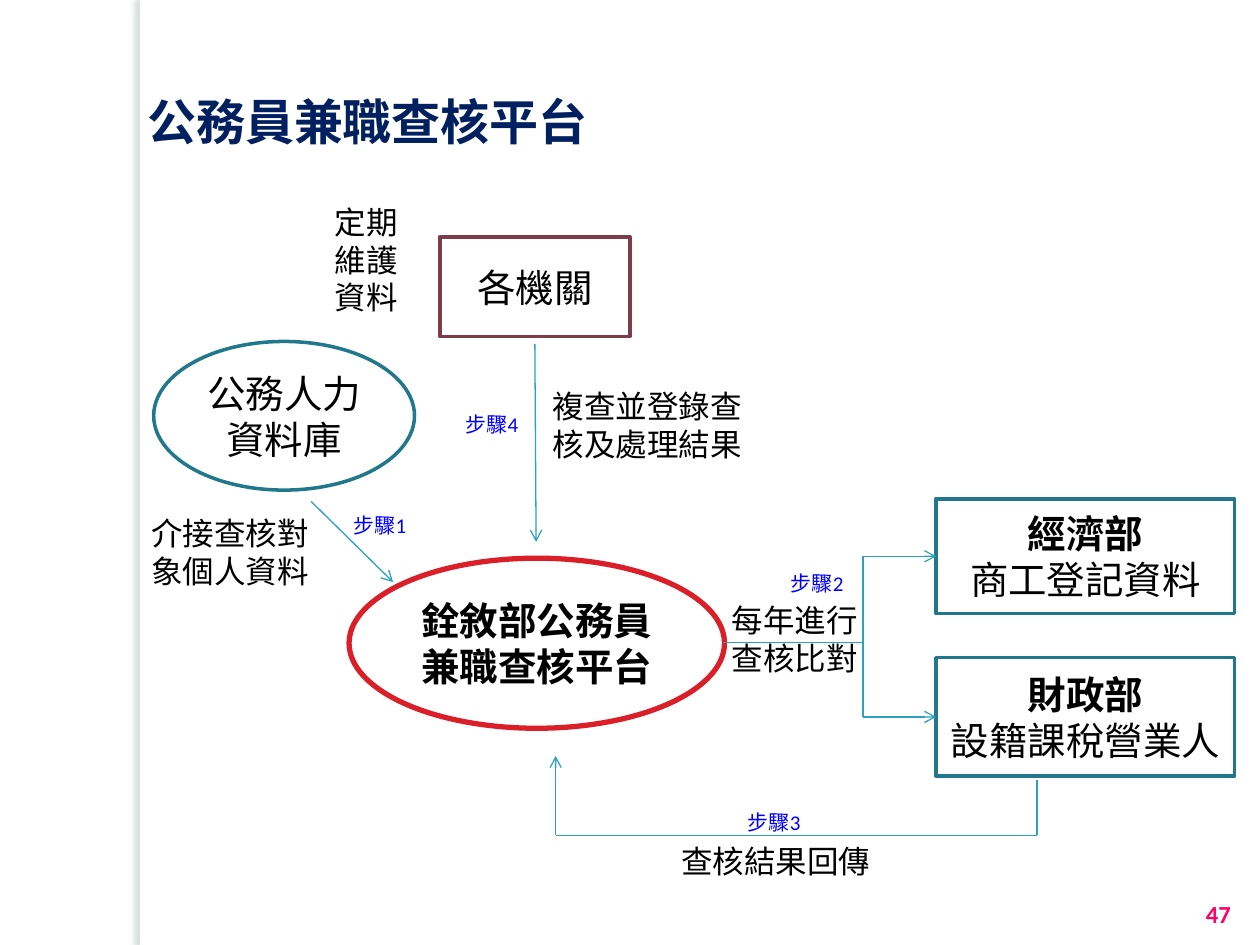
from dataclasses import dataclass

from lxml import etree
from pptx import Presentation
from pptx import util as u
from pptx.dml.color import RGBColor
from pptx.enum import shapes, text
from pptx.oxml import ns, xmlchemy

RECT, OVAL = shapes.MSO_SHAPE.RECTANGLE, shapes.MSO_SHAPE.OVAL
MIDDLE, BOTTOM = text.MSO_ANCHOR.MIDDLE, text.MSO_ANCHOR.BOTTOM
CENTER, LEFT = text.PP_ALIGN.CENTER, text.PP_ALIGN.LEFT


@dataclass(frozen=True)
class Theme:
    white: str = "FFFFFF"
    black: str = "000000"
    navy: str = "002060"
    teal: str = "21788D"
    arrow: str = "2DA2BF"
    plum: str = "7D3C4A"
    red: str = "DA1F28"
    blue: str = "0000FF"
    pink: str = "FF0066"
    shade: str = "6E7A7D"
    title: int = 28
    node: int = 22
    note: int = 18
    number: int = 14
    step: int = 12
    sans: str = "Noto Sans CJK TC"
    heading: str = "Noto Sans CJK SC"
    label: str = "Arial"
    latin: str = "Calibri"


T = Theme()


def sub(parent, tag, **attrs):
    el = etree.SubElement(parent, ns.qn(tag))
    for key, value in attrs.items():
        el.set(key, str(value))
    return el


def write(sp, lines, size, font, color=T.black, bold=(), align=LEFT, anchor=None):
    tf = sp.text_frame
    tf.word_wrap = True
    if anchor is not None:
        tf.vertical_anchor = anchor
    for i, line in enumerate(lines):
        p = tf.paragraphs[0] if i == 0 else tf.add_paragraph()
        p.alignment = align
        r = p.add_run()
        r.text = line
        for key, value in {"size": u.Pt(size), "name": font, "bold": i in bold}.items():
            setattr(r.font, key, value)
        r.font.color.rgb = RGBColor.from_string(color)
        sub(r.font._element, "a:ea", typeface=T.heading if font == T.heading else T.sans)


def text_box(s, box, lines, size, font, **fmt):
    sp = s.shapes.add_textbox(*map(u.Inches, box))
    write(sp, lines, size, font, **fmt)
    return sp


def note(s, box, *lines):
    text_box(s, box, lines, T.note, T.label)


def step(s, x, y, number):
    text_box(s, (x, y, 0.71, 0.41), [f"步驟{number}"], T.step, T.latin,
             color=T.blue, align=CENTER, anchor=MIDDLE)


def node(s, kind, box, lines, color, width=2, font=T.sans, bold=()):
    sp = s.shapes.add_shape(kind, *map(u.Inches, box))
    sp.shadow.inherit = False
    sp.fill.solid()
    sp.fill.fore_color.rgb = RGBColor.from_string(T.white)
    sp.line.color.rgb = RGBColor.from_string(color)
    sp.line.width = u.Pt(width)
    write(sp, lines, T.node, font, bold=bold, align=CENTER, anchor=MIDDLE)
    return sp


def link(s, start, end, arrow=False):
    cx = s.shapes.add_connector(shapes.MSO_CONNECTOR.STRAIGHT, *map(u.Inches, start + end))
    cx.line.color.rgb = RGBColor.from_string(T.arrow)
    cx.line.width = u.Pt(0.75)
    if arrow:
        sub(cx.line._get_or_add_ln(), "a:tailEnd", type="arrow")
    sub(cx._element.spPr, "a:effectLst")
    return cx


def side_edge(s, x, y, w, h):
    sp = s.shapes.add_shape(RECT, *map(u.Inches, (x, y, w, h)))
    sp.shadow.inherit = False
    sp.fill.solid()
    sp.fill.fore_color.rgb = RGBColor.from_string(T.white)
    sp.line.fill.background()
    effects = sp._element.spPr.find(ns.qn("a:effectLst"))
    shadow = sub(effects, "a:outerShdw", blurRad=u.Pt(3), dist=u.Pt(3),
                 dir=180 * 60000, algn="tl", rotWithShape=0)
    sub(sub(shadow, "a:srgbClr", val=T.shade), "a:alpha", val=25000)


def agencies(s, x, y, w, h):
    node(s, RECT, (x, y, w, h), ["各機關"], T.plum)
    mid = x + w / 2
    link(s, (mid, y + h + 0.06), (mid + 0.01, y + h + 1.63), arrow=True)
    note(s, (x + 0.8, y + 1.14, 1.85, 0.71), "複查並登錄查核及處理結果")
    step(s, x + 0.06, y + 1.28, 4)


def database(s, x, y, w, h):
    node(s, OVAL, (x, y, w, h), ["公務人力資料庫"], T.teal)
    note(s, (x + 1.34, y - 1.15, 0.75, 1.01), "定期維護資料")
    link(s, (x + 1.25, y + 1.27), (x + 1.9, y + 1.91), arrow=True)
    note(s, (x - 0.12, y + 1.32, 1.55, 0.71), "介接查核對象個人資料")
    step(s, x + 1.44, y + 1.25, 1)


def platform(s, x, y, w, h):
    node(s, OVAL, (x, y, w, h), ["銓敘部公務員兼職查核平台"], T.red, 3, T.latin, (0,))


def ministries(s, x, y, w, h):
    trunk = x - 0.58
    entries = [("經濟部", "商工登記資料", y, 0.91),
               ("財政部", "設籍課稅營業人", y + h - 0.94, 0.94)]
    centers = []
    for name, data, top, height in entries:
        sp = node(s, RECT, (x, top, w, height), [name, data], T.teal, bold=(0,))
        centers.append(top + height / 2 + 0.02)
        sp.top = u.Inches(top)
        cx = link(s, (trunk, top + height / 2), (x, top + height / 2), arrow=True)
        cx.end_connect(sp, 1)
    link(s, (trunk, y + 0.455), (trunk, y + h - 0.47))
    link(s, (x - 1.69, y + 1.14), (trunk, y + 1.14))
    note(s, (x - 1.72, y + 0.76, 1.73, 0.71), "每年進行", "查核比對")
    step(s, x - 1.3, y + 0.46, 2)


def feedback(s, x, y, w, h):
    right, base = x + w, y + h
    link(s, (right, y + 0.19), (right, base))
    link(s, (right, base), (x, base))
    link(s, (x, base), (x, y), arrow=True)
    note(s, (x + 0.9, base, 1.82, 0.4), "查核結果回傳")
    step(s, x + 1.38, base - 0.31, 3)


def main():
    prs = Presentation()
    prs.slide_width, prs.slide_height = u.Inches(10), u.Inches(7.5)
    s = prs.slides.add_slide(prs.slide_layouts[6])
    side_edge(s, 1.11, 0, 0.08, 7.5)
    text_box(s, (1.07, 0.68, 6.92, 0.57), ["公務員兼職查核平台"], T.title, T.heading,
             color=T.navy, bold=(0,))
    agencies(s, 3.49, 1.88, 1.51, 0.79)
    database(s, 1.22, 2.71, 2.07, 1.18)
    platform(s, 2.77, 4.43, 2.98, 1.35)
    ministries(s, 7.43, 3.96, 2.37, 2.2)
    feedback(s, 4.41, 6, 3.82, 0.63)
    text_box(s, (9.42, 6.9, 0.5, 0.52), ["47"], T.number, T.latin,
             color=T.pink, bold=(0,), align=CENTER, anchor=BOTTOM)
    prs.save("out.pptx")


if __name__ == "__main__":
    main()
